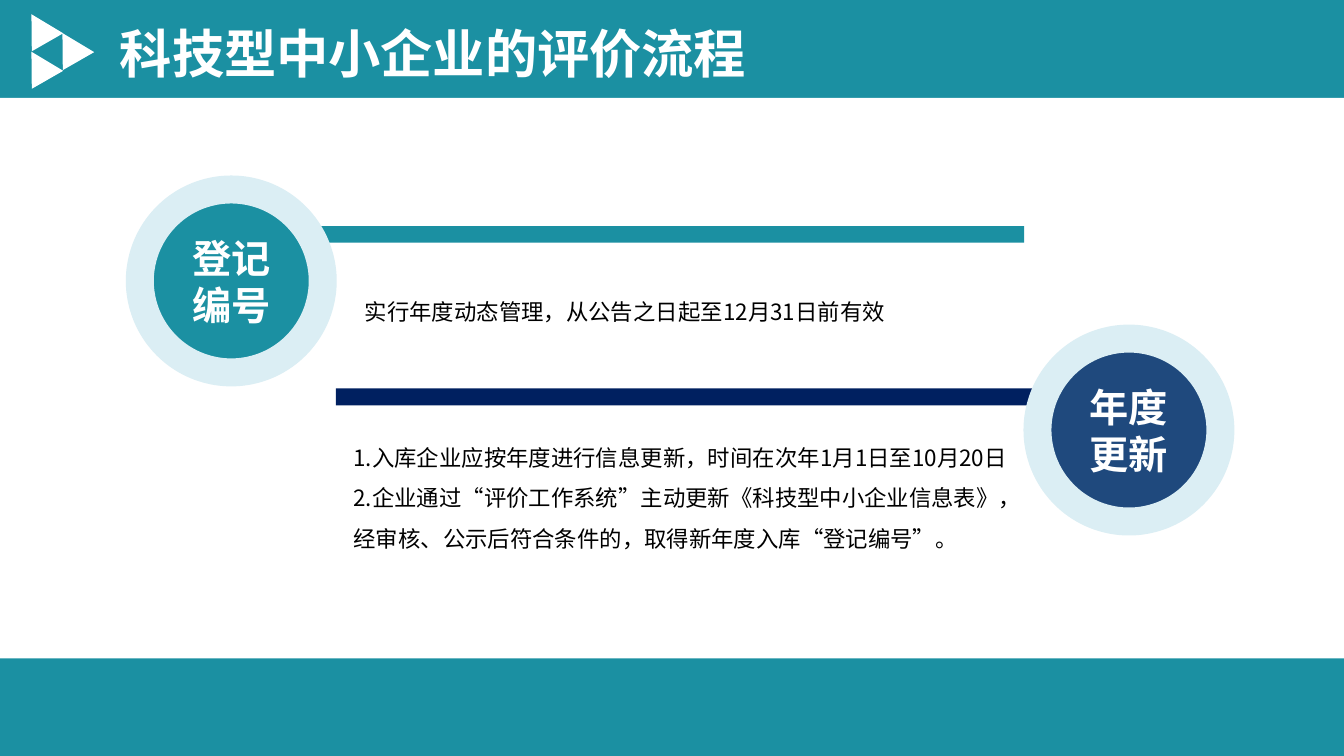
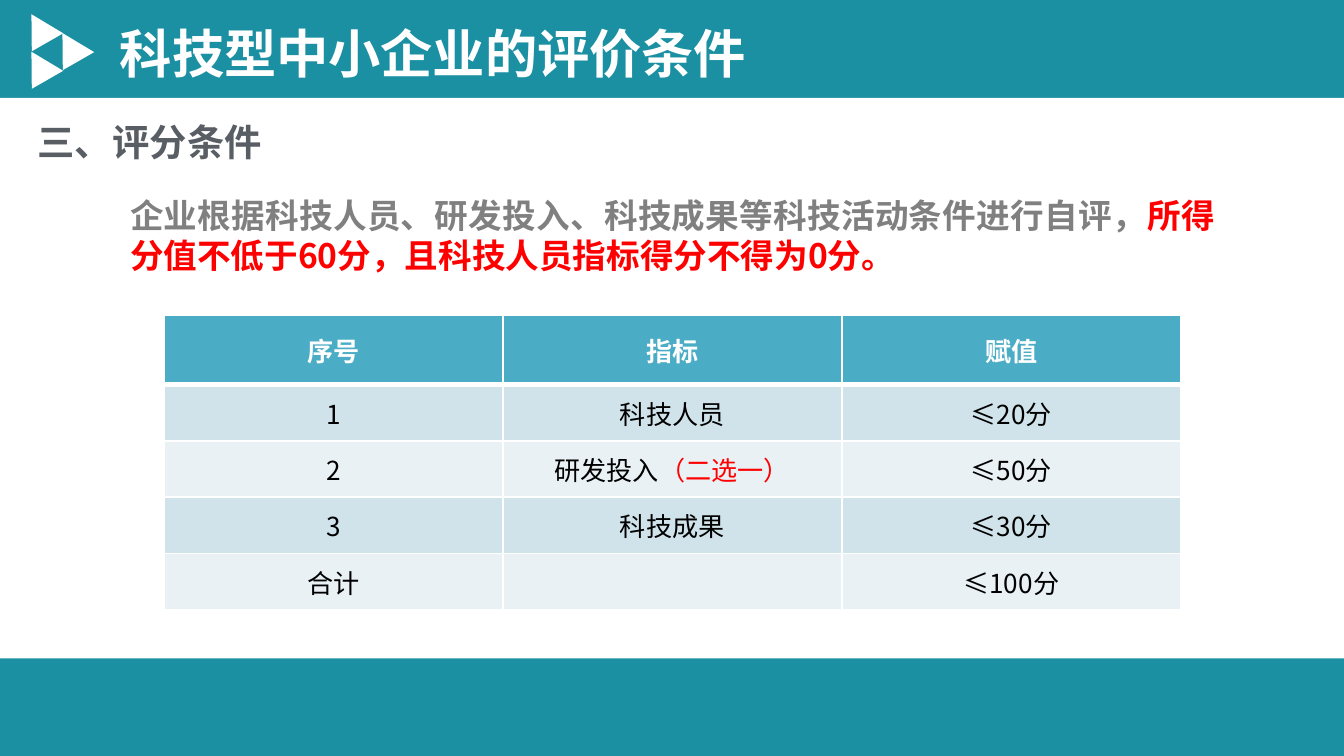
from lxml.etree import SubElement
from pptx import Presentation
from pptx.dml.color import RGBColor
from pptx.enum.shapes import MSO_SHAPE as Preset
from pptx.enum.text import MSO_ANCHOR as Anchor, MSO_AUTO_SIZE as AutoSize, PP_ALIGN as Align
from pptx.oxml.ns import qn
from pptx.util import Pt

FONT = "Noto Sans CJK SC"
WHITE = RGBColor(0xFF, 0xFF, 0xFF)
BLACK = RGBColor(0x00, 0x00, 0x00)
RED = RGBColor(0xFF, 0x00, 0x00)
GREY = RGBColor(0x80, 0x80, 0x80)
SLATE = RGBColor(0x59, 0x5E, 0x64)
TEAL = RGBColor(0x1B, 0x90, 0xA2)
NAVY = RGBColor(0x00, 0x20, 0x60)
BLUE = RGBColor(0x1F, 0x49, 0x7D)
RING = RGBColor(0xDB, 0xEE, 0xF4)
HEADER = RGBColor(0x4B, 0xAC, 0xC6)
STRIPES = RGBColor(0xD0, 0xE3, 0xEA), RGBColor(0xE9, 0xF1, 0xF5)

SLIDE_W, SLIDE_H = 720, 405
ROOMY, SNUG = (7.2, 3.6), (5.4, 2.7)

PROCESS_TITLE = "科技型中小企业的评价流程"
STAGES = [
    ("登记编号", TEAL, (74.9, 101.5), TEAL, (164.2, 121.2, 384.5, 8.8)),
    ("年度更新", BLUE, (555.8, 181.4), NAVY, (180, 208, 388, 9.2)),
]
VALIDITY = "实行年度动态管理，从公告之日起至12月31日前有效"
UPDATE_STEPS = [
    "1.入库企业应按年度进行信息更新，时间在次年1月1日至10月20日",
    "2.企业通过“评价工作系统”主动更新《科技型中小企业信息表》，经审核、公示后符合条件的，取得新年度入库“登记编号”。",
]

CRITERIA_TITLE = "科技型中小企业的评价条件"
SECTION = "三、评分条件"
RULE = [
    ("企业根据科技人员、研发投入、科技成果等科技活动条件进行自评，", GREY),
    ("所得分值不低于60分，且科技人员指标得分不得为0分。", RED),
]
SCORES = [
    ["序号", "指标", "赋值"],
    ["1", "科技人员", "≤20分"],
    ["2", [("研发投入", BLACK), ("（二选一）", RED)], "≤50分"],
    ["3", "科技成果", "≤30分"],
    ["合计", "", "≤100分"],
]


def write(frame, *paragraphs, size, color=BLACK, bold=False, align=Align.LEFT,
          spacing=1.0, insets=ROOMY, anchor=Anchor.TOP, wrap=True):
    frame.word_wrap = wrap
    frame.auto_size = AutoSize.NONE
    frame.vertical_anchor = anchor
    frame.margin_left = frame.margin_right = Pt(insets[0])
    frame.margin_top = frame.margin_bottom = Pt(insets[1])
    for index, content in enumerate(paragraphs):
        paragraph = frame.add_paragraph() if index else frame.paragraphs[0]
        paragraph.alignment = align
        paragraph.line_spacing = spacing
        paragraph.space_before = Pt(0)
        pieces = [(content, color)] if isinstance(content, str) else content
        for words, tint in pieces:
            run = paragraph.add_run()
            run.text = words
            run.font.name = FONT
            run.font.size = Pt(size)
            run.font.bold = bold
            run.font.color.rgb = tint
            SubElement(run.font._element, qn("a:ea"), typeface=FONT)


def place(shape, left, top, width, height):
    shape.left, shape.top = Pt(left), Pt(top)
    shape.width, shape.height = Pt(width), Pt(height)


def add_filled(slide, preset, box, fill):
    shape = slide.shapes.add_shape(preset, *map(Pt, box))
    shape.shadow.inherit = False
    shape.fill.solid()
    shape.fill.fore_color.rgb = fill
    shape.line.fill.background()
    return shape


def add_text(slide, box, *paragraphs, **style):
    label = slide.shapes.add_textbox(*map(Pt, box))
    write(label.text_frame, *paragraphs, **style)


def add_page(deck, layout, heading):
    slide = deck.slides.add_slide(deck.slide_layouts[layout])
    title = slide.shapes.title
    place(title, 57, 8, 353.5, 41)
    write(title.text_frame, heading, size=28, color=WHITE, bold=True, wrap=False)
    panel = add_filled(slide, Preset.RECTANGLE, (0, 52.4, SLIDE_W, 300.4), WHITE)
    title.element.addprevious(panel.element)
    for left, top in [(11.5, 6.5), (11.5, 26.6), (28.1, 16.6)]:
        mark = add_filled(slide, Preset.ISOSCELES_TRIANGLE, (left, top, 19.4, 17.3), WHITE)
        mark.rotation = 330.2
    return slide


def build_process(deck):
    slide = add_page(deck, 1, PROCESS_TITLE)
    for name, fill, corner, bar_fill, bar in STAGES:
        add_filled(slide, Preset.RECTANGLE, bar, bar_fill)
        badge = add_filled(slide, Preset.OVAL, (*corner, 98, 98), fill)
        badge.line.color.rgb = RING
        badge.line.width = Pt(15)
        write(badge.text_frame, name, size=21, color=WHITE, bold=True,
              align=Align.CENTER, insets=SNUG, anchor=Anchor.MIDDLE)
    add_text(slide, (190, 149.8, 356.5, 24.5), VALIDITY, size=12, spacing=1.5, insets=SNUG)
    steps = slide.placeholders[1]
    place(steps, 184, 228, 365, 68.5)
    write(steps.text_frame, *UPDATE_STEPS, size=12, spacing=1.5, insets=SNUG)
    for paragraph in steps.text_frame.paragraphs:
        properties = paragraph._p.get_or_add_pPr()
        properties.set("marL", "0")
        properties.set("indent", "0")
        SubElement(properties, qn("a:buNone"))


def set_borders(cell, **widths):
    properties = cell._tc.get_or_add_tcPr()
    for index, (side, width) in enumerate(widths.items()):
        border = properties.makeelement(qn(f"a:{side}"), {"w": str(Pt(width))})
        fill = SubElement(border, qn("a:solidFill"))
        SubElement(fill, qn("a:srgbClr"), val=str(WHITE))
        properties.insert(index, border)


def build_criteria(deck):
    slide = add_page(deck, 5, CRITERIA_TITLE)
    add_text(slide, (13, 60.5, 135.5, 31.5), SECTION, size=20, color=SLATE, bold=True, wrap=False)
    add_text(slide, (62.6, 100.8, 595.4, 51), RULE, size=18, bold=True, align=Align.JUSTIFY)
    heights = [37.2] + [30.2] * (len(SCORES) - 1)
    scores = slide.shapes.add_table(len(SCORES), len(SCORES[0]), Pt(87.8), Pt(168.8),
                                    Pt(544.8), Pt(sum(heights))).table
    for row, (values, height) in enumerate(zip(SCORES, heights)):
        scores.rows[row].height = Pt(height)
        heading = row == 0
        for column, value in enumerate(values):
            cell = scores.cell(row, column)
            cell.fill.solid()
            cell.fill.fore_color.rgb = HEADER if heading else STRIPES[(row - 1) % 2]
            cell.vertical_anchor = Anchor.MIDDLE
            set_borders(cell, lnL=1, lnR=1, lnT=3 if row == 1 else 1, lnB=3 if heading else 1)
            if value:
                write(cell.text_frame, value, size=14, color=WHITE if heading else BLACK,
                      bold=heading, align=Align.CENTER, anchor=Anchor.MIDDLE)


def main():
    deck = Presentation()
    deck.slide_width, deck.slide_height = Pt(SLIDE_W), Pt(SLIDE_H)
    backdrop = deck.slide_master.background.fill
    backdrop.solid()
    backdrop.fore_color.rgb = TEAL
    build_process(deck)
    build_criteria(deck)
    deck.save("out.pptx")


if __name__ == "__main__":
    main()
